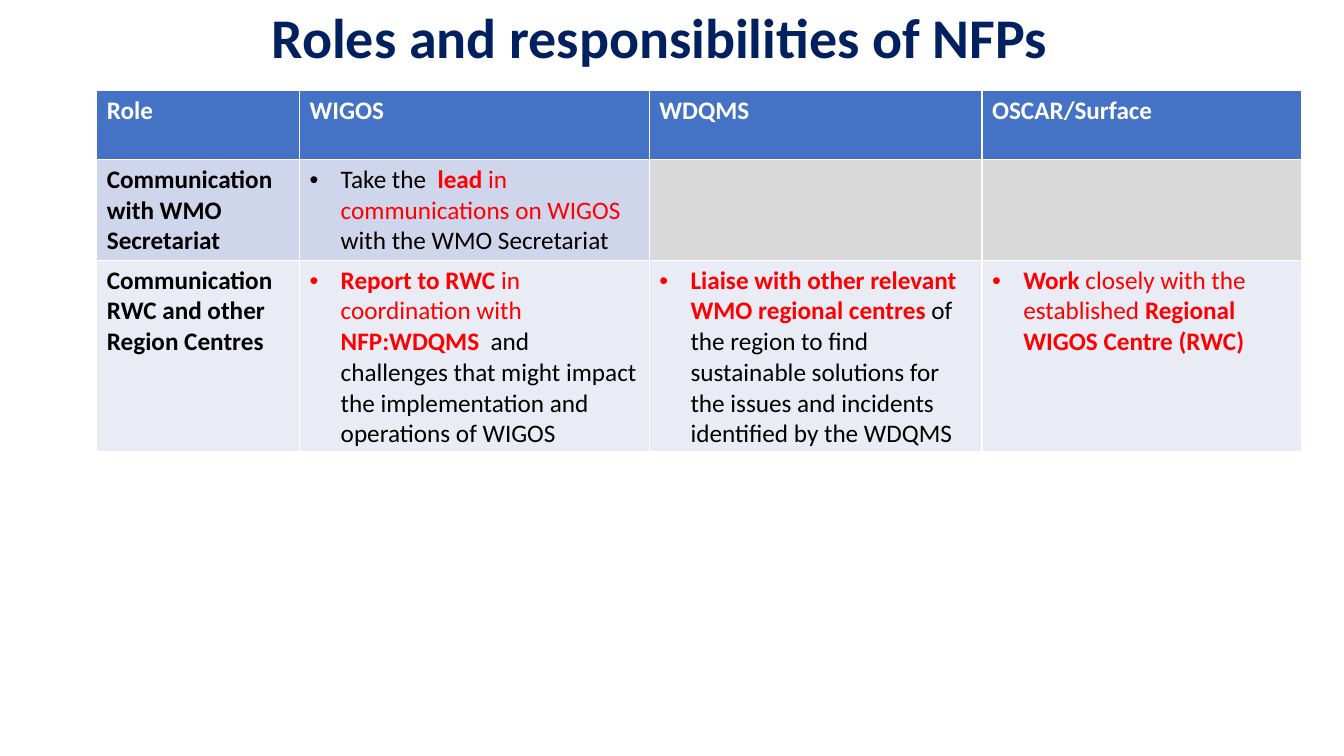
from lxml.etree import SubElement
from pptx import Presentation
from pptx.dml.color import RGBColor
from pptx.enum.text import MSO_ANCHOR as Anchor, MSO_AUTO_SIZE as AutoSize, PP_ALIGN as Align
from pptx.oxml.ns import qn
from pptx.util import Inches, Pt

NAVY = RGBColor(0x00, 0x20, 0x60)
BLUE = RGBColor(0x44, 0x72, 0xC4)
LIGHT_BLUE = RGBColor(0xCF, 0xD5, 0xEA)
PALE_BLUE = RGBColor(0xE9, 0xEB, 0xF5)
GREY = RGBColor(0xD9, 0xD9, 0xD9)
WHITE = RGBColor(0xFF, 0xFF, 0xFF)
BLACK = RGBColor(0x00, 0x00, 0x00)
RED = RGBColor(0xFF, 0x00, 0x00)
FONT = "Calibri"

TITLE = "Roles and responsibilities of NFPs"
HEADERS = ["Role", "WIGOS", "WDQMS", "OSCAR/Surface"]
ROLES = [
    ("Communication with WMO Secretariat", LIGHT_BLUE, [
        [("Take the  ", BLACK, False), ("lead", RED, True),
         (" in communications on WIGOS ", RED, False),
         ("with the WMO Secretariat", BLACK, False)],
        [],
        [],
    ]),
    ("Communication RWC and other Region Centres", PALE_BLUE, [
        [("Report to RWC ", RED, True), ("in coordination with ", RED, False),
         ("NFP:WDQMS  ", RED, True),
         ("and challenges that might impact the implementation and operations of WIGOS",
          BLACK, False)],
        [("Liaise with other relevant WMO regional centres ", RED, True),
         ("of the region to find sustainable solutions for the issues and incidents "
          "identified by the WDQMS", BLACK, False)],
        [("Work", RED, True), (" closely with the established ", RED, False),
         ("Regional WIGOS Centre (RWC)", RED, True)],
    ]),
]
COLUMN_WIDTHS = [2.01, 3.47, 3.3, 3.17]
ROW_HEIGHTS = [0.68, 1.0, 1.9]
BULLET_INDENT = Inches(0.31)


def add_span(para, text, size, color, bold):
    span = para.add_run()
    span.text = text
    span.font.name = FONT
    span.font.size = Pt(size)
    span.font.color.rgb = color
    span.font.bold = bold


def add_bullet(para):
    properties = para._p.get_or_add_pPr()
    properties.set("marL", str(BULLET_INDENT))
    properties.set("indent", str(-BULLET_INDENT))
    SubElement(properties, qn("a:buFont")).set("typeface", "Arial")
    SubElement(properties, qn("a:buChar")).set("char", "•")


def fill_cell(cell, color, spans, bulleted=False):
    cell.fill.solid()
    cell.fill.fore_color.rgb = color
    para = cell.text_frame.paragraphs[0]
    para.font.size = Pt(18)
    if bulleted and spans:
        add_bullet(para)
    for text, text_color, bold in spans:
        add_span(para, text, 18, text_color, bold)


def add_title(page):
    title = page.shapes.title
    title.left, title.top = Inches(0.79), Inches(0.22)
    title.width, title.height = Inches(11.5), Inches(0.5)
    frame = title.text_frame
    frame.margin_left = frame.margin_right = frame.margin_top = frame.margin_bottom = 0
    frame.vertical_anchor = Anchor.TOP
    frame.word_wrap = True
    frame.auto_size = AutoSize.SHAPE_TO_FIT_TEXT
    para = frame.paragraphs[0]
    para.alignment = Align.CENTER
    para.line_spacing = Pt(33.6)
    add_span(para, TITLE, 40, NAVY, True)


def add_roles_table(page):
    table = page.shapes.add_table(
        len(ROW_HEIGHTS), len(COLUMN_WIDTHS), Inches(0.96), Inches(0.9),
        Inches(sum(COLUMN_WIDTHS)), Inches(sum(ROW_HEIGHTS))).table
    for column, width in zip(table.columns, COLUMN_WIDTHS):
        column.width = Inches(width)
    for row, height in zip(table.rows, ROW_HEIGHTS):
        row.height = Inches(height)
    for index, header in enumerate(HEADERS):
        fill_cell(table.cell(0, index), BLUE, [(header, WHITE, True)])
    for row, (role, color, duties) in enumerate(ROLES, 1):
        fill_cell(table.cell(row, 0), color, [(role, BLACK, True)])
        for index, spans in enumerate(duties, 1):
            fill_cell(table.cell(row, index), color if spans else GREY, spans, True)


def main():
    deck = Presentation()
    deck.slide_width, deck.slide_height = Inches(13.33), Inches(7.5)
    page = deck.slides.add_slide(deck.slide_layouts[5])
    add_title(page)
    add_roles_table(page)
    deck.save("out.pptx")


if __name__ == "__main__":
    main()
